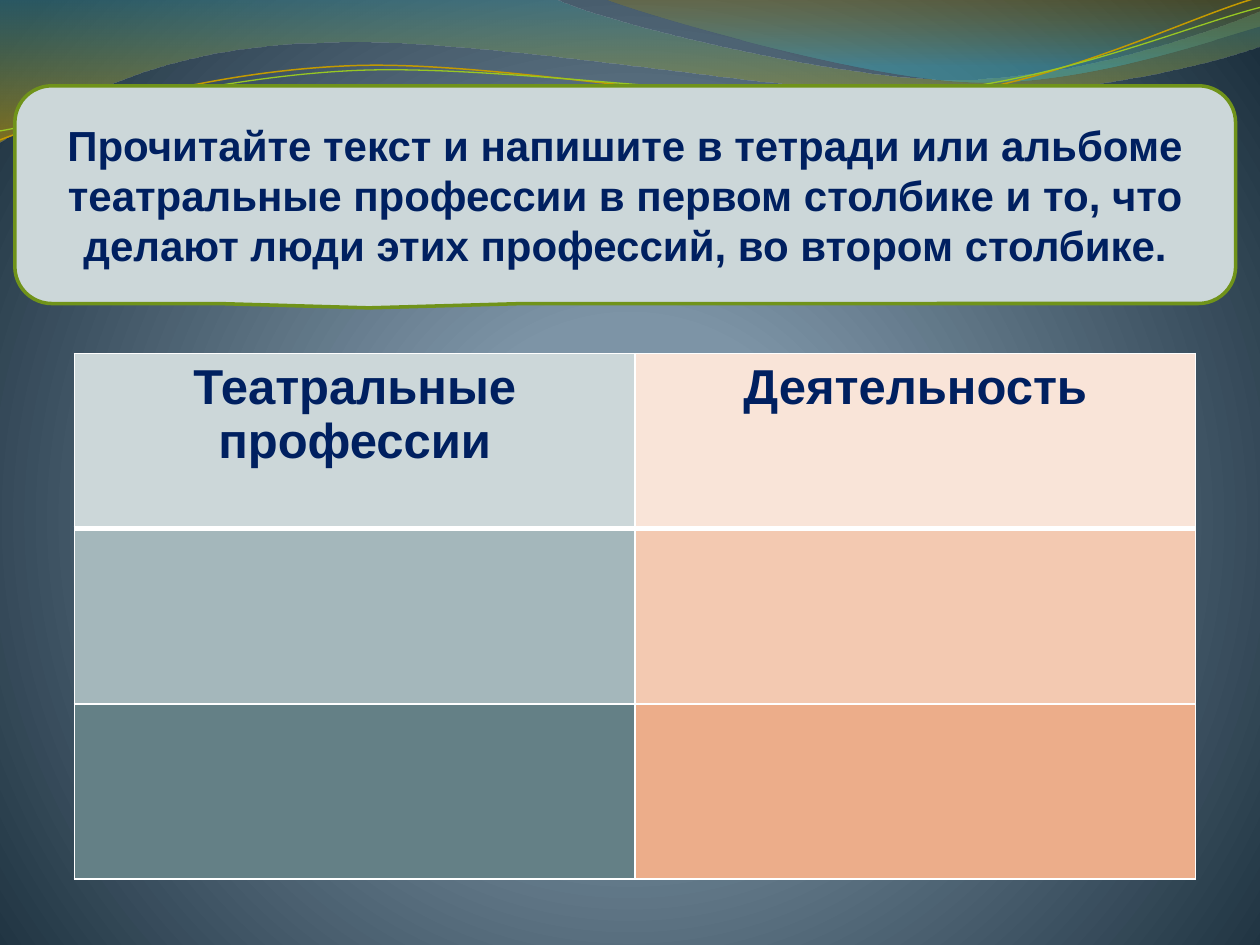
import pptx
import pptx.util
import pptx.oxml
import pptx.oxml.ns
import pptx.dml.color
import pptx.enum.shapes
import pptx.enum.text
from pptx.util import Cm, Pt

COLORS = {
    "navy": "002060", "mist": "CCD7D9", "olive": "70931A", "white": "FFFFFF",
    "gold": "C49A00", "lime": "98C723",
}
INSTRUCTION = ("Прочитайте текст и напишите в тетради или альбоме театральные "
               "профессии в первом столбике и то, что делают люди этих "
               "профессий, во втором столбике.")
HEADINGS = ["Театральные профессии", "Деятельность"]
CELL_FILLS = [("CCD7D9", "F9E4D8"), ("A4B7BB", "F3C9B1"), ("648086", "ECAD8A")]

# Gradient stops: position %, colour, opacity %
BACKDROP = [(0, "809AAF", 100), (25, "7D94A6", 100), (100, "1C303E", 100)]
RADIAL = ('<a:path path="circle"><a:fillToRect l="10000" t="110000" '
          'r="10000" b="100000"/></a:path>')
DOWNWARD = '<a:lin ang="5400000" scaled="0"/>'

# Outlines in cm: a pair is a straight step, six numbers are a Bezier step
RIBBONS = [
    ([(0, -0.03), (11.18, -0.03), (12.09, 0.43, 16.87, 1.6, 19.25, 1.6),
      (21.67, 1.6, 24.33, 0.66, 25.4, 0.23), (25.43, 0.91),
      (24.97, 1.12, 22.1, 1.93, 18.95, 1.91),
      (15.8, 1.91, 9.7, 0.71, 6.53, 0.86),
      (3.28, 0.89, 1.17, 2.11, -0.03, 2.87)],
     [(0, "3B8890", 45), (100, "C99E00", 55)]),
    ([(12.17, -0.03), (12.93, 0.28, 17.32, 1.57, 19.53, 1.65),
      (21.74, 1.75, 24.41, 0.81, 25.4, 0.53), (25.4, 0)],
     [(0, "A48100", 30), (80, "3EA9B4", 45)]),
]
# Strands are drawn level and then turned
STRAND_ROTATION = 357.3
STRANDS = [
    ([(-0.05, 2.22), (1.19, 1.82, 4.02, 1.04, 7.05, 1.06),
      (10.05, 1.07, 15.02, 2.37, 18.08, 2.29),
      (21.13, 2.2, 23.87, 0.91, 25.41, 0.55)], "gold", 0.85),
    ([(-0.04, 2.04), (1.16, 1.9, 4.18, 1.15, 7.2, 1.16),
      (10.25, 1.18, 15.13, 2.23, 18.19, 2.16),
      (21.21, 2.1, 23.93, 1.06, 25.45, 0.75)], "lime", 0.75),
]


def rgb(value):
    return pptx.dml.color.RGBColor.from_string(value)


def set_gradient(fill, owner, stops, direction):
    """Give the fill inside the owner element its stops and direction."""
    fill.gradient()
    old = next(owner.iter(pptx.oxml.ns.qn("a:gradFill")))
    marks = "".join(
        f'<a:gs pos="{position * 1000}"><a:srgbClr val="{color}">'
        f'<a:alpha val="{opacity * 1000}"/></a:srgbClr></a:gs>'
        for position, color, opacity in stops)
    new = pptx.oxml.parse_xml(
        f'<a:gradFill {pptx.oxml.ns.nsdecls("a")} rotWithShape="1">'
        f'<a:gsLst>{marks}</a:gsLst>{direction}</a:gradFill>')
    old.getparent().replace(old, new)


def add_outline(page, steps, close):
    """Build a freeform through the step ends, then bend its Bezier steps."""
    ends = [(Cm(step[-2]), Cm(step[-1])) for step in steps]
    builder = page.shapes.build_freeform(*ends[0])
    builder.add_line_segments(ends[1:], close=close)
    shape = builder.convert_to_shape()
    shape.shadow.inherit = False
    segments = list(shape._element.iter(pptx.oxml.ns.qn("a:lnTo")))
    for step, segment in zip(steps[1:], segments):
        if len(step) == 6:
            points = "".join(
                f'<a:pt x="{Cm(x) - shape.left}" y="{Cm(y) - shape.top}"/>'
                for x, y in zip(step[::2], step[1::2]))
            curve = pptx.oxml.parse_xml(
                f'<a:cubicBezTo {pptx.oxml.ns.nsdecls("a")}>{points}'
                '</a:cubicBezTo>')
            segment.getparent().replace(segment, curve)
    return shape


def write(frame, text, size):
    para = frame.paragraphs[0]
    para.text = text
    para.alignment = pptx.enum.text.PP_ALIGN.CENTER
    para.font.name = "Arial"
    para.font.size = Pt(size)
    para.font.bold = True
    para.font.color.rgb = rgb(COLORS["navy"])


def set_borders(cell, widths):
    properties = cell._tc.get_or_add_tcPr()
    for index, (side, width) in enumerate(zip("LRTB", widths)):
        properties.insert(index, pptx.oxml.parse_xml(
            f'<a:ln{side} {pptx.oxml.ns.nsdecls("a")} w="{Pt(width)}">'
            f'<a:solidFill><a:srgbClr val="{COLORS["white"]}"/></a:solidFill>'
            f'</a:ln{side}>'))


def add_waves(page):
    for steps, stops in RIBBONS:
        ribbon = add_outline(page, steps, close=True)
        set_gradient(ribbon.fill, ribbon._element, stops, DOWNWARD)
        ribbon.line.fill.background()
    for steps, color, width in STRANDS:
        strand = add_outline(page, steps, close=False)
        strand.rotation = STRAND_ROTATION
        strand.fill.background()
        strand.line.color.rgb = rgb(COLORS[color])
        strand.line.width = Pt(width)


def add_instruction(page):
    callout = page.shapes.add_shape(
        pptx.enum.shapes.MSO_SHAPE.ROUNDED_RECTANGULAR_CALLOUT,
        Cm(0.3), Cm(1.73), Cm(24.61), Cm(4.39))
    for index, value in enumerate((-0.21, 0.52, 0.17)):
        callout.adjustments[index] = value
    callout.shadow.inherit = False
    callout.fill.solid()
    callout.fill.fore_color.rgb = rgb(COLORS["mist"])
    callout.line.color.rgb = rgb(COLORS["olive"])
    callout.line.width = Pt(2)
    callout.text_frame.word_wrap = True
    callout.text_frame.vertical_anchor = pptx.enum.text.MSO_ANCHOR.MIDDLE
    write(callout.text_frame, INSTRUCTION, 24)


def add_professions(page):
    table = page.shapes.add_table(
        len(CELL_FILLS), len(HEADINGS),
        Cm(1.5), Cm(7.13), Cm(22.6), Cm(10.59)).table
    for row, fills in enumerate(CELL_FILLS):
        for column, color in enumerate(fills):
            cell = table.cell(row, column)
            cell.fill.solid()
            cell.fill.fore_color.rgb = rgb(color)
            # The rule under the headings is thicker than the others
            set_borders(cell, (1, 1, 3 if row == 1 else 1, 3 if row == 0 else 1))
    for column, heading in enumerate(HEADINGS):
        write(table.cell(0, column).text_frame, heading, 28)


def main():
    deck = pptx.Presentation()
    deck.slide_width, deck.slide_height = Cm(25.4), Cm(19.05)
    page = deck.slides.add_slide(deck.slide_layouts[6])
    set_gradient(page.background.fill, page._element, BACKDROP, RADIAL)
    add_waves(page)
    add_instruction(page)
    add_professions(page)
    deck.save("out.pptx")


if __name__ == "__main__":
    main()
